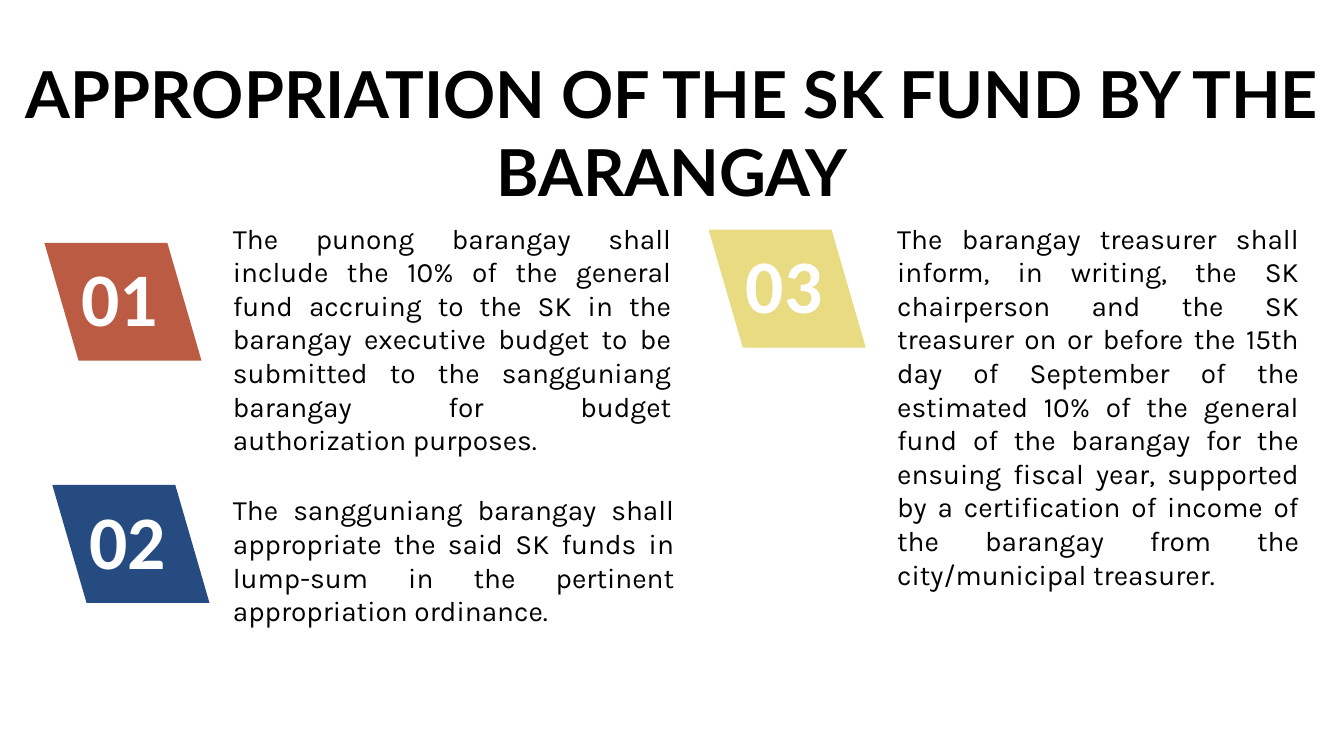
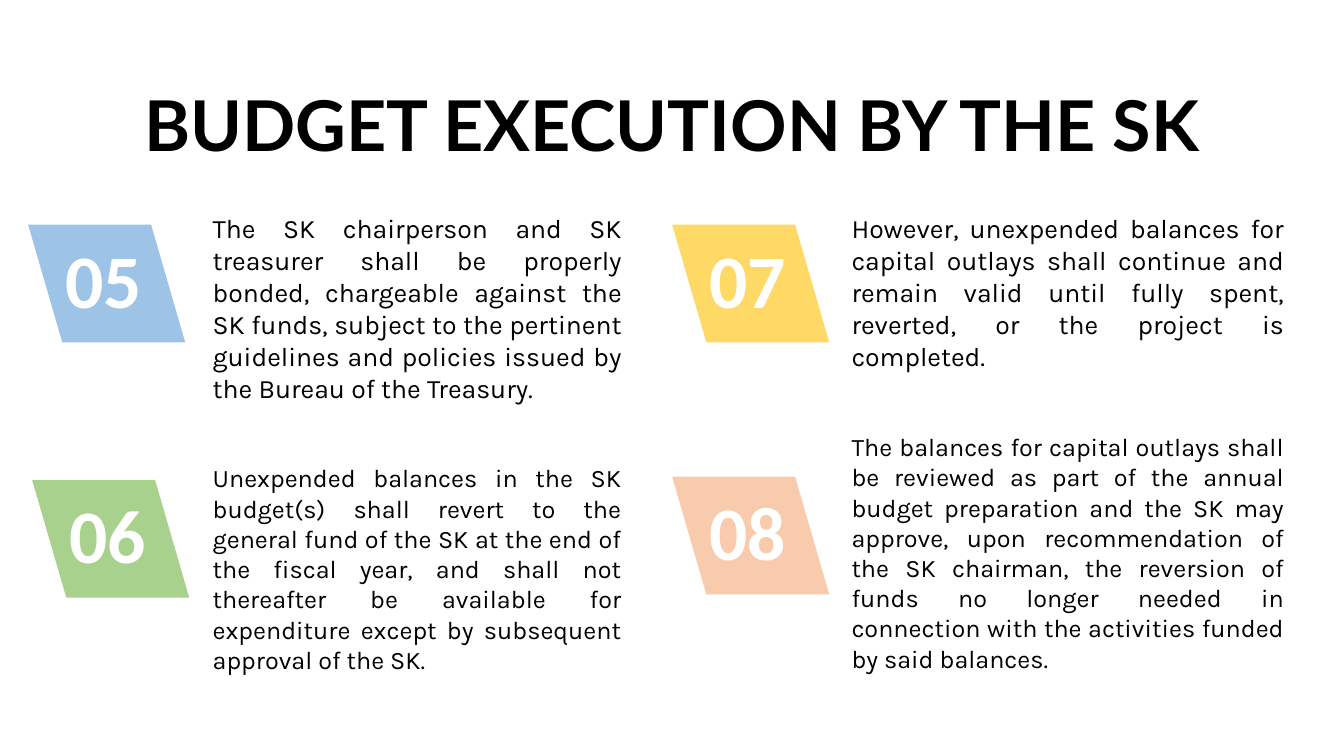
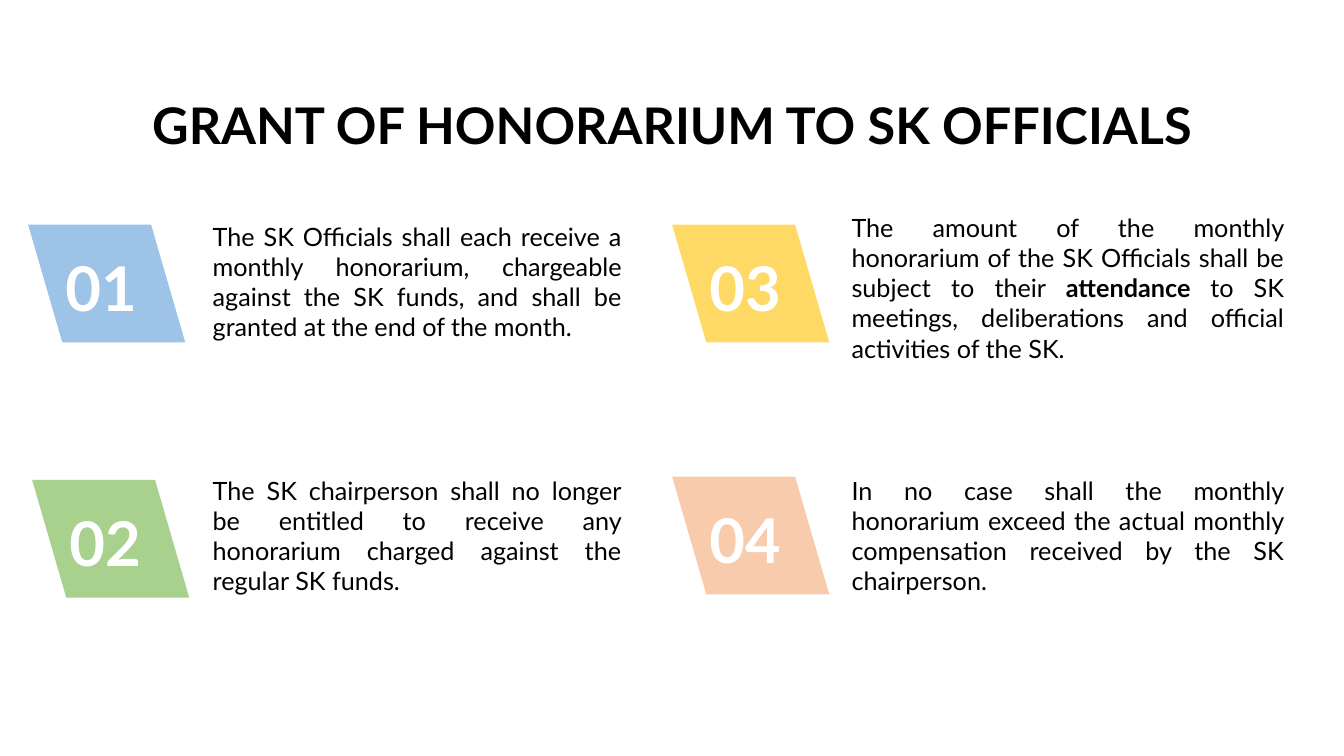
import dataclasses
import pptx
import pptx.dml.color
import pptx.enum.shapes
import pptx.enum.text
import pptx.util

Cm, Pt = pptx.util.Cm, pptx.util.Pt
Align = pptx.enum.text.PP_ALIGN
Anchor = pptx.enum.text.MSO_ANCHOR


@dataclasses.dataclass(frozen=True)
class Theme:
    ink: str = "000000"
    white: str = "FFFFFF"
    rust: str = "BB5B43"
    navy: str = "264B80"
    sand: str = "E9DB82"
    blue: str = "9DC3E6"
    green: str = "A9D18E"
    gold: str = "FFD966"
    peach: str = "F8CBAD"
    head: str = "Lato"
    body: str = "Karla"
    digit: str = "Calibri"
    big: float = 50
    long: float = 46.2
    small: float = 36
    mark: float = 54
    mark_low: float = 44
    text: float = 20
    text_mid: float = 19
    text_low: float = 18


THEME = Theme()


class Deck:
    def __init__(self, theme):
        self.theme = theme
        self.file = pptx.Presentation()
        self.file.slide_width = Cm(33.87)
        self.file.slide_height = Cm(19.05)
        self.slide = None

    def page(self):
        self.slide = self.file.slides.add_slide(self.file.slide_layouts[6])
        fill = self.slide.background.fill
        fill.solid()
        fill.fore_color.rgb = self.color(self.theme.white)

    def color(self, code):
        return pptx.dml.color.RGBColor.from_string(code)

    def style(self, run, face, size, color, bold=False):
        font = run.font
        font.name, font.size, font.bold = face, Pt(size), bold
        font.color.rgb = self.color(color)

    def frame(self, shape, anchor, left, top, right, bottom):
        """Set wrap, anchor and insets (in cm) of the text in a shape."""
        frame = shape.text_frame
        frame.word_wrap = True
        frame.vertical_anchor = anchor
        frame.margin_left, frame.margin_top = Cm(left), Cm(top)
        frame.margin_right, frame.margin_bottom = Cm(right), Cm(bottom)
        return frame

    def title(self, text, top, size):
        box = self.slide.shapes.add_textbox(Cm(0.43), Cm(top), Cm(33.02), Cm(3.45))
        frame = self.frame(box, Anchor.MIDDLE, 0.18, 0.1, 0.18, 0.1)
        frame.text = text
        line = frame.paragraphs[0]
        line.alignment = Align.CENTER
        self.style(line.runs[0], self.theme.head, size, self.theme.ink, True)

    def badge(self, label, left, top, color, face, size):
        """Draw a numbered parallelogram that leans to the left."""
        shape = self.slide.shapes.add_shape(
            pptx.enum.shapes.MSO_SHAPE.PARALLELOGRAM,
            Cm(left), Cm(top), Cm(3.96), Cm(2.97))
        shape.adjustments[0] = 0.29
        shape.element.spPr.xfrm.set("flipH", "1")
        shape.shadow.inherit = False
        shape.fill.solid()
        shape.fill.fore_color.rgb = self.color(color)
        shape.line.fill.background()
        frame = self.frame(shape, Anchor.BOTTOM, 0.25, 2.16, 0.25, 0.13)
        frame.text = label
        line = frame.paragraphs[0]
        line.alignment = Align.LEFT
        self.style(line.runs[0], face, size, self.theme.white, True)

    def note(self, parts, left, top, width, height, face, size):
        """Add justified text; every second part is bold."""
        box = self.slide.shapes.add_textbox(Cm(left), Cm(top), Cm(width), Cm(height))
        frame = self.frame(box, Anchor.TOP, 0, 0.13, 0, 0.13)
        frame.auto_size = pptx.enum.text.MSO_AUTO_SIZE.SHAPE_TO_FIT_TEXT
        line = frame.paragraphs[0]
        line.alignment = Align.JUSTIFY
        for rank, part in enumerate(parts):
            run = line.add_run()
            run.text = part
            self.style(run, face, size, self.theme.ink, rank % 2 == 1)


# Badge places and colours: left, top, colour
TRIO = [(1.12, 6.12, THEME.rust), (1.32, 12.22, THEME.navy), (17.86, 5.79, THEME.sand)]
QUAD = [(0.71, 5.66, THEME.blue), (0.81, 12.09, THEME.green),
        (16.94, 5.66, THEME.gold), (16.94, 12.01, THEME.peach)]

# Each note: left, top, width, height, size, parts of the text
PAGES = [
    dict(title=("APPROPRIATION OF THE SK FUND BY THE BARANGAY", 1.6, THEME.long),
         first=1, badges=TRIO, mark=(THEME.digit, THEME.mark), face=THEME.body,
         notes=[
             (5.87, 5.44, 11.05, 4.52, THEME.text,
              ["The punong barangay shall include the 10% of the general fund accruing "
               "to the SK in the barangay executive budget to be submitted to the "
               "sangguniang barangay for budget authorization purposes."]),
             (5.87, 12.29, 11.13, 2.82, THEME.text,
              ["The sangguniang barangay shall appropriate the said SK funds in "
               "lump-sum in the pertinent appropriation ordinance."]),
             (22.61, 5.44, 10.13, 7.09, THEME.text,
              ["The barangay treasurer shall inform, in writing, the SK chairperson "
               "and the SK treasurer on or before the 15th day of September of the "
               "estimated 10% of the general fund of the barangay for the ensuing "
               "fiscal year, supported by a certification of income of the barangay "
               "from the city/municipal treasurer."]),
         ]),
    dict(title=("BUDGET EXECUTION BY THE SK", 1.4, THEME.big),
         first=5, badges=QUAD, mark=(THEME.digit, THEME.mark), face=THEME.body,
         notes=[
             (5.36, 5.21, 10.31, 4.32, THEME.text_mid,
              ["The SK chairperson and SK treasurer shall be properly bonded, "
               "chargeable against the SK funds, subject to the pertinent guidelines "
               "and policies issued by the Bureau of the Treasury."]),
             (5.36, 11.53, 10.3, 4.11, THEME.text_low,
              ["Unexpended balances in the SK budget(s) shall revert to the general "
               "fund of the SK at the end of the fiscal year, and shall not thereafter "
               "be available for expenditure except by subsequent approval of the SK."]),
             (21.46, 5.21, 10.9, 3.51, THEME.text_mid,
              ["However, unexpended balances for capital outlays shall continue and "
               "remain valid until fully spent, reverted, or the project is completed."]),
             (21.46, 10.74, 10.9, 5.64, THEME.text_low,
              ["The balances for capital outlays shall be reviewed as part of the "
               "annual budget preparation and the SK may approve, upon recommendation "
               "of the SK chairman, the reversion of funds no longer needed in "
               "connection with the activities funded by said balances."]),
         ]),
    dict(title=("GRANT OF HONORARIUM TO SK OFFICIALS", 1.4, THEME.small),
         first=1, badges=QUAD, mark=(THEME.head, THEME.mark_low), face=THEME.head,
         notes=[
             (5.36, 5.44, 10.31, 3.33, THEME.text_low,
              ["The SK Officials shall each receive a monthly honorarium, chargeable "
               "against the SK funds, and shall be granted at the end of the month."]),
             (5.36, 11.84, 10.3, 3.33, THEME.text_low,
              ["The SK chairperson shall no longer be entitled to receive any "
               "honorarium charged against the regular SK funds."]),
             (21.46, 5.21, 10.9, 4.11, THEME.text_low,
              ["The amount of the monthly honorarium of the SK Officials shall be "
               "subject to their ", "attendance ",
               "to SK meetings, deliberations and official activities of the SK."]),
             (21.46, 11.84, 10.9, 3.33, THEME.text_low,
              ["In no case shall the monthly honorarium exceed the actual monthly "
               "compensation received by the SK chairperson."]),
         ]),
]


def main():
    deck = Deck(THEME)
    for page in PAGES:
        deck.page()
        for rank, (left, top, color) in enumerate(page["badges"], page["first"]):
            deck.badge(f"{rank:02}", left, top, color, *page["mark"])
        for left, top, width, height, size, parts in page["notes"]:
            deck.note(parts, left, top, width, height, page["face"], size)
        deck.title(*page["title"])
    deck.file.save("out.pptx")


if __name__ == "__main__":
    main()
